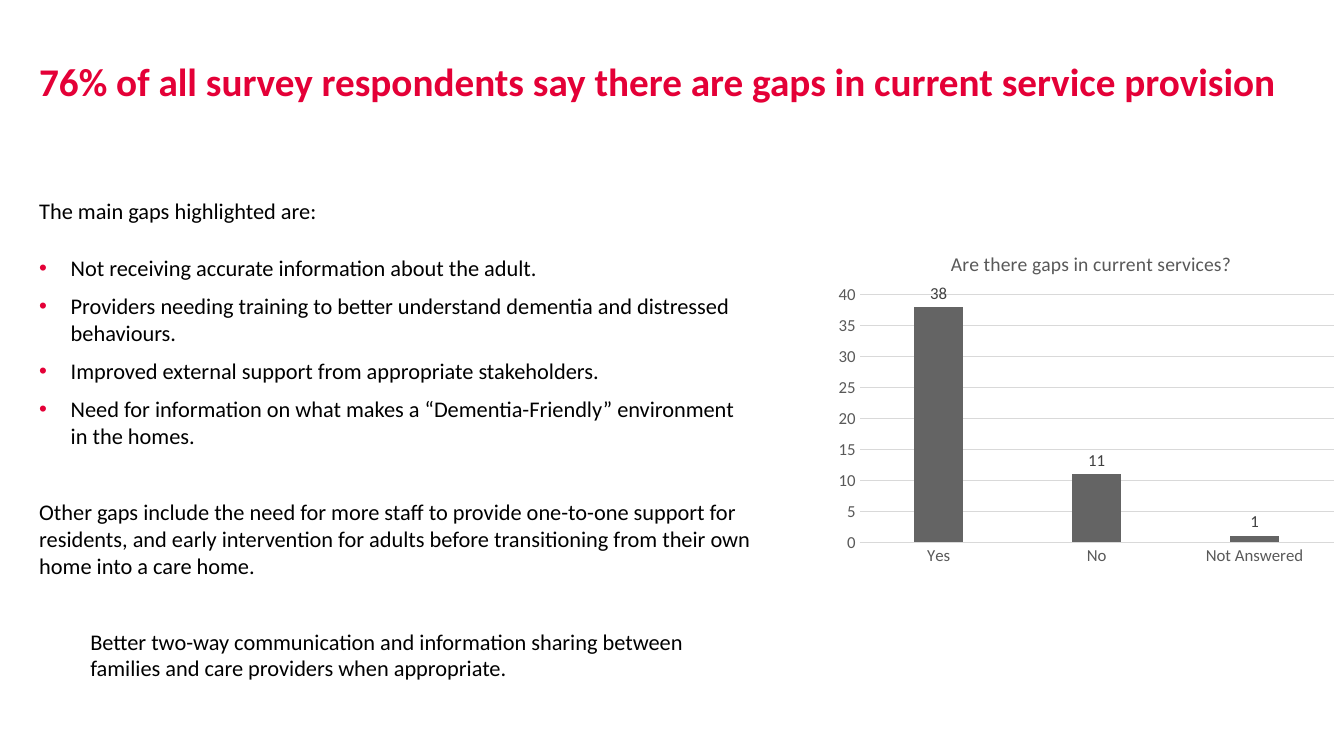
from dataclasses import dataclass

from lxml.etree import SubElement
from pptx import Presentation
from pptx.chart.data import CategoryChartData
from pptx.dml.color import RGBColor
from pptx.enum.chart import XL_CHART_TYPE, XL_LABEL_POSITION, XL_TICK_MARK
from pptx.oxml.ns import qn
from pptx.util import Pt

RED = RGBColor(0xE4, 0x00, 0x37)
BLACK = RGBColor(0, 0, 0)
BAR = RGBColor(0x64, 0x64, 0x64)
LABEL = RGBColor(0x40, 0x40, 0x40)
GREY = RGBColor(0x59, 0x59, 0x59)
RULE = RGBColor(0xD9, 0xD9, 0xD9)
FACE = "Calibri"
LEFT = 28


@dataclass
class Para:
    text: str
    size: float = 16
    color: RGBColor = BLACK
    bold: bool = False
    bullet: bool = False
    indent: float = 0
    before: float = 4
    after: float = 4


TITLE = [Para("76% of all survey respondents say there are gaps in current service provision",
              size=28, color=RED, bold=True, before=0, after=0)]
BODY = [
    Para("The main gaps highlighted are:", after=18),
    Para("Not receiving accurate information about the adult.", bullet=True),
    Para("Providers needing training to better understand dementia and distressed behaviours.",
         bullet=True),
    Para("Improved external support from appropriate stakeholders.", bullet=True),
    Para("Need for information on what makes a “Dementia-Friendly” environment in the homes.",
         bullet=True, after=31),
    Para("Other gaps include the need for more staff to provide one-to-one support for "
         "residents, and early intervention for adults before transitioning from their own "
         "home into a care home.", after=31),
    Para("Better two-way communication and information sharing between families and care "
         "providers when appropriate.", indent=36.5),
]


def style(font, size: float, color: RGBColor, bold: bool = False) -> None:
    font.name = FACE
    font.size = Pt(size)
    font.bold = bold
    font.color.rgb = color


def add_text(slide, left: float, top: float, width: float, height: float,
             paras: list[Para]) -> None:
    frame = slide.shapes.add_textbox(Pt(left), Pt(top), Pt(width), Pt(height)).text_frame
    frame.word_wrap = True
    frame.margin_left = frame.margin_right = frame.margin_top = frame.margin_bottom = 0
    for i, para in enumerate(paras):
        line = frame.add_paragraph() if i else frame.paragraphs[0]
        line.text = para.text
        line.space_before, line.space_after = Pt(para.before), Pt(para.after)
        style(line.runs[0].font, para.size, para.color, para.bold)
        props = line._p.get_or_add_pPr()
        if para.bullet:
            props.set("marL", str(Pt(22.5)))
            props.set("indent", str(-Pt(22.5)))
            tint = SubElement(props, qn("a:buClr"))
            SubElement(tint, qn("a:srgbClr"), val=str(RED))
            SubElement(props, qn("a:buFont"), typeface="Arial")
            SubElement(props, qn("a:buChar"), char="•")
        else:
            props.set("marL", str(Pt(para.indent)))


def place(owner, index: int, **parts: object) -> None:
    layout = owner.find(qn("c:layout"))
    if layout is None:
        layout = SubElement(owner, qn("c:layout"))
        owner.insert(index, layout)
    manual = SubElement(layout, qn("c:manualLayout"))
    for tag, value in parts.items():
        SubElement(manual, qn(f"c:{tag}"), val=str(value))


def add_bars(slide) -> None:
    data = CategoryChartData()
    data.categories = ["Yes", "No", "Not Answered"]
    data.add_series("Series 1", [38, 11, 1])
    chart = slide.shapes.add_chart(XL_CHART_TYPE.COLUMN_CLUSTERED, Pt(592), Pt(164),
                                   Pt(368), Pt(245.5), data).chart
    chart.has_legend = False
    chart.font.name = "Montserrat"
    chart.font.size = Pt(14)
    chart.font.color.rgb = BLACK

    chart.has_title = True
    title = chart.chart_title
    title.text_frame.text = "Are there gaps in current services?"
    style(title.text_frame.paragraphs[0].runs[0].font, 14, GREY)
    place(title._element, 1, xMode="edge", yMode="edge", x=0.23, y=0.05)
    place(chart._chartSpace.chart.plotArea, 0, layoutTarget="inner",
          xMode="edge", yMode="edge", x=0.06, y=0.19, w=0.92, h=0.72)

    for axis in (chart.category_axis, chart.value_axis):
        axis.major_tick_mark = axis.minor_tick_mark = XL_TICK_MARK.NONE
        style(axis.tick_labels.font, 12, GREY)
    scale = chart.value_axis
    scale.minimum_scale, scale.maximum_scale, scale.major_unit = 0, 40, 5
    scale.format.line.fill.background()
    for line in (chart.category_axis.format.line, scale.major_gridlines.format.line):
        line.color.rgb = RULE
        line.width = Pt(0.75)

    plot = chart.plots[0]
    plot.gap_width, plot.overlap, plot.vary_by_categories = 219, -27, False
    bars = plot.series[0]
    bars.format.fill.solid()
    bars.format.fill.fore_color.rgb = BAR
    labels = bars.data_labels
    labels.show_value = True
    labels.position = XL_LABEL_POSITION.OUTSIDE_END
    style(labels.font, 12, LABEL)


def main() -> None:
    deck = Presentation()
    deck.slide_width, deck.slide_height = Pt(960), Pt(540)
    slide = deck.slides.add_slide(deck.slide_layouts[6])
    add_text(slide, LEFT, 140.5, 508.5, 337.5, BODY)
    add_text(slide, LEFT, 41, 895, 83.5, TITLE)
    add_bars(slide)
    deck.save("out.pptx")


if __name__ == "__main__":
    main()
